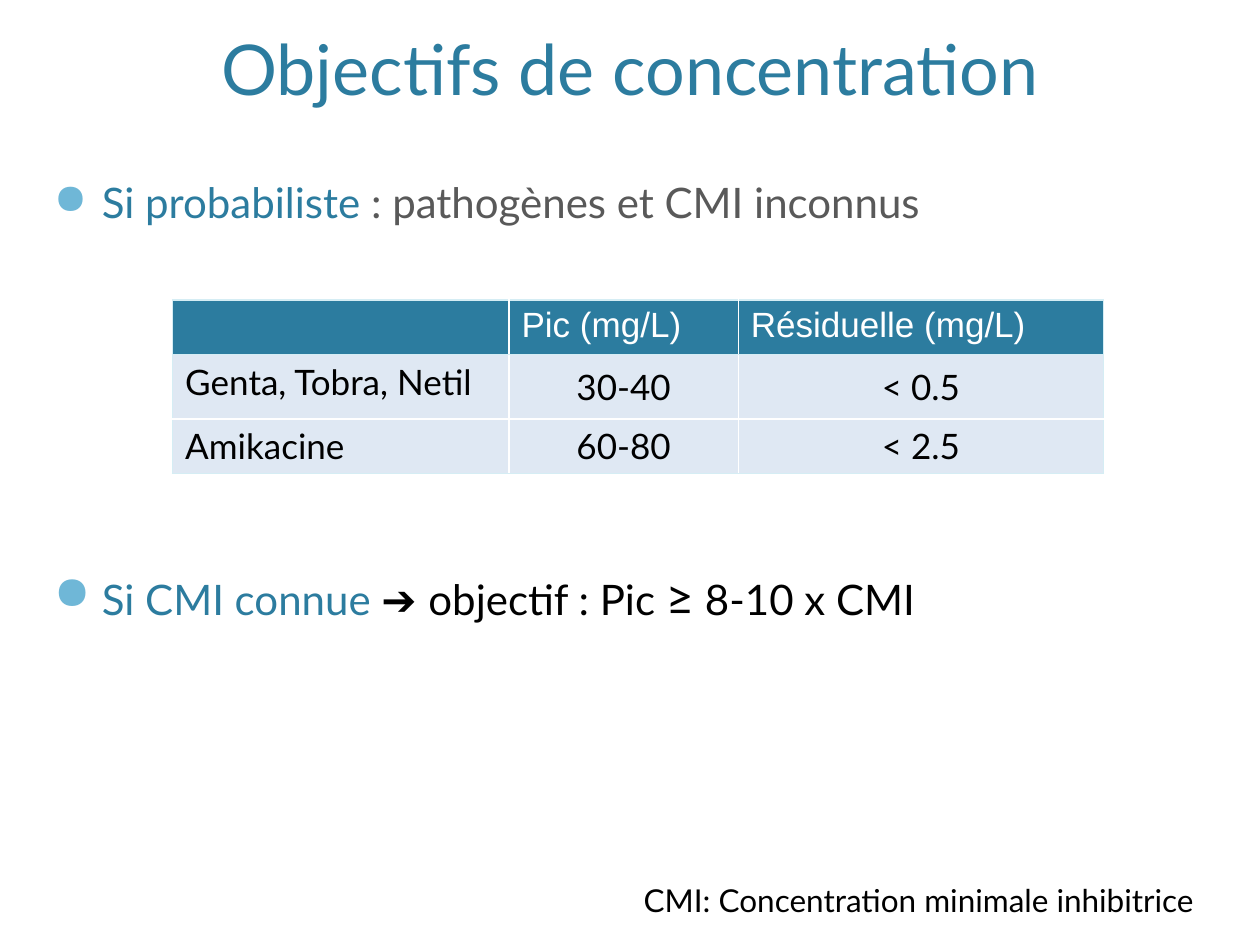
from lxml import etree
from pptx import Presentation
from pptx.dml.color import RGBColor
from pptx.enum.text import MSO_ANCHOR as ANCHOR, PP_ALIGN as ALIGN
from pptx.oxml.ns import qn
from pptx.util import Inches, Pt

TEAL = RGBColor(0x2C, 0x7C, 0x9F)
SKY = RGBColor(0x6F, 0xB7, 0xD7)
GREY = RGBColor(0x59, 0x59, 0x59)
ICE = RGBColor(0xD5, 0xED, 0xF4)
PALE = RGBColor(0xDF, 0xE8, 0xF3)
WHITE = RGBColor(0xFF, 0xFF, 0xFF)
BLACK = RGBColor(0x00, 0x00, 0x00)


def add_run(p, text, size, color, font="Lato"):
    r = p.add_run()
    r.text = text
    r.font.size = Pt(size)
    r.font.name = font
    r.font.color.rgb = color


def add_color(parent, tag, color):
    holder = etree.SubElement(parent, qn(tag))
    etree.SubElement(holder, qn("a:srgbClr"), val=str(color))


prs = Presentation()
prs.slide_width = Inches(10)
prs.slide_height = Inches(7.5)
s = prs.slides.add_slide(prs.slide_layouts[6])

tf = s.shapes.add_textbox(Inches(0.6), Inches(0.18), Inches(8.8), Inches(0.75)).text_frame
tf.word_wrap = True
tf.vertical_anchor = ANCHOR.BOTTOM
p = tf.paragraphs[0]
p.alignment = ALIGN.CENTER
p.line_spacing = 0.9
add_run(p, "Objectifs de concentration", 40, TEAL)

bullets = [
    (100, [("Si probabiliste ", 24, TEAL, "Lato"),
           (": pathogènes et CMI inconnus", 24, GREY, "Lato")]),
    (110, [("Si CMI connue ", 24, TEAL, "Lato"),
           ("➔ ", 24, BLACK, "Arial"),
           ("objectif : Pic ", 24, BLACK, "Lato"),
           ("≥", 28, BLACK, "Lato"),
           (" 8-10 x CMI", 24, BLACK, "Lato")]),
]
tf = s.shapes.add_textbox(Inches(0.33), Inches(1.35), Inches(9.36), Inches(5.82)).text_frame
tf.word_wrap = True
for i, (bullet_size, runs) in enumerate(bullets):
    p = tf.paragraphs[0] if i == 0 else tf.add_paragraph()
    pPr = p._p.get_or_add_pPr()
    pPr.set("marL", str(Inches(0.38)))
    pPr.set("indent", str(-Inches(0.38)))
    add_color(pPr, "a:buClr", SKY)
    etree.SubElement(pPr, qn("a:buSzPct"), val=str(bullet_size * 1000))
    etree.SubElement(pPr, qn("a:buChar"), char="●")
    if i:
        p.space_before = Pt(194)
    for run in runs:
        add_run(p, *run)

rows = [
    ("", "Pic (mg/L)", "Résiduelle (mg/L)"),
    ("Genta, Tobra, Netil", "30-40", "< 0.5"),
    ("Amikacine", "60-80", "< 2.5"),
]
table = s.shapes.add_table(3, 3, Inches(1.37), Inches(2.38), Inches(7.39), Inches(1.37)).table
for col, width in zip(table.columns, (2.67, 1.82, 2.9)):
    col.width = Inches(width)
for row, height in zip(table.rows, (0.43, 0.51, 0.43)):
    row.height = Inches(height)
for i, texts in enumerate(rows):
    for j, text in enumerate(texts):
        cell = table.cell(i, j)
        borders = {
            "a:lnL": WHITE if j else ICE,
            "a:lnR": WHITE if j < 2 else ICE,
            "a:lnT": WHITE if i == 2 else ICE,
            "a:lnB": WHITE if i == 1 else ICE,
        }
        tcPr = cell._tc.get_or_add_tcPr()
        for tag, color in borders.items():
            ln = etree.SubElement(tcPr, qn(tag), w=str(Pt(1)))
            add_color(ln, "a:solidFill", color)
        cell.fill.solid()
        cell.fill.fore_color.rgb = PALE if i else TEAL
        p = cell.text_frame.paragraphs[0]
        if i and j:
            cell.vertical_anchor = ANCHOR.MIDDLE
            p.alignment = ALIGN.CENTER
        if text:
            add_run(p, text, 20, BLACK if i else WHITE, "Lato" if i else "Arial")

tf = s.shapes.add_textbox(Inches(5.01), Inches(6.94), Inches(4.99), Inches(0.4)).text_frame
tf.word_wrap = False
add_run(tf.paragraphs[0], "CMI: Concentration minimale inhibitrice", 18, BLACK)

prs.save("out.pptx")
